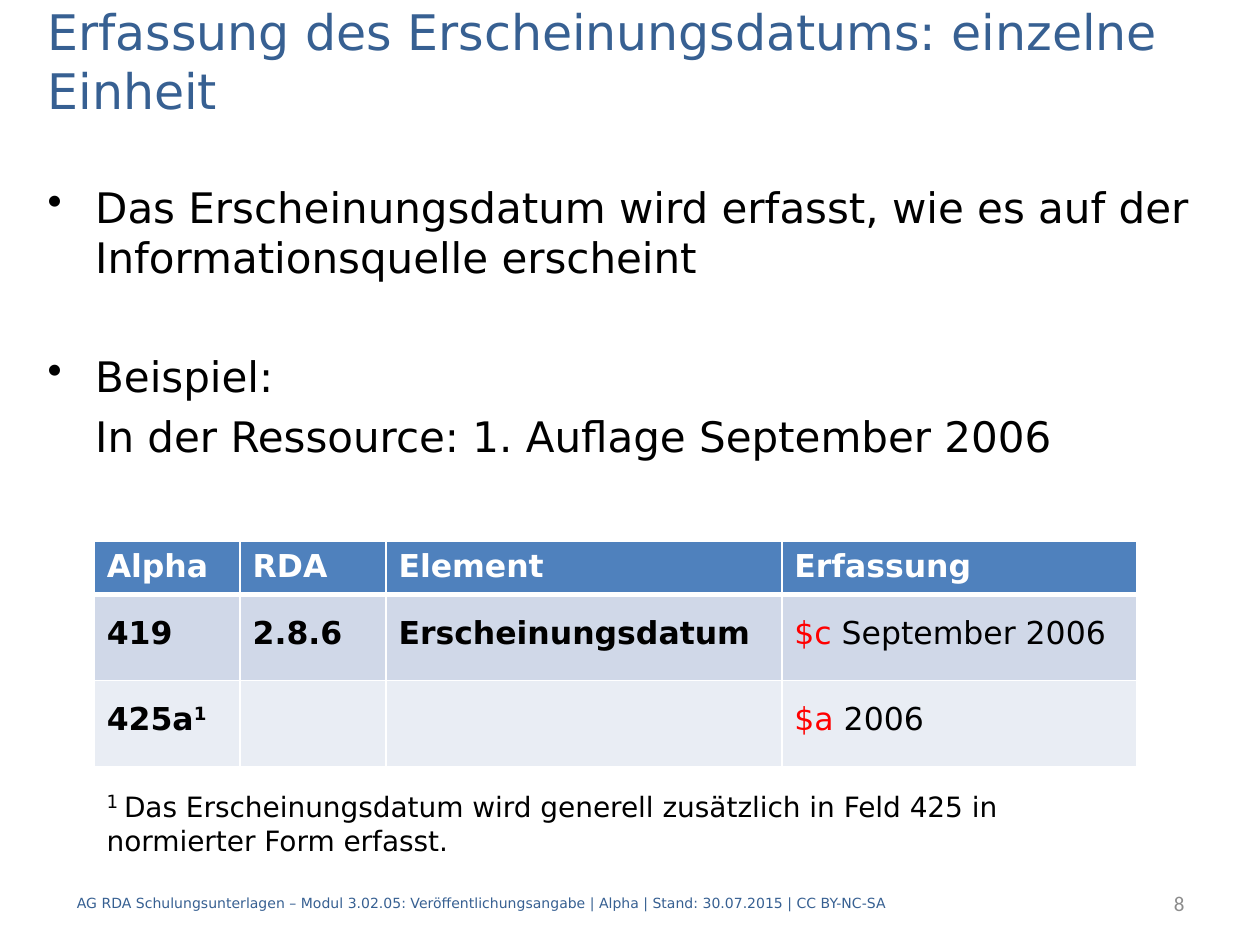
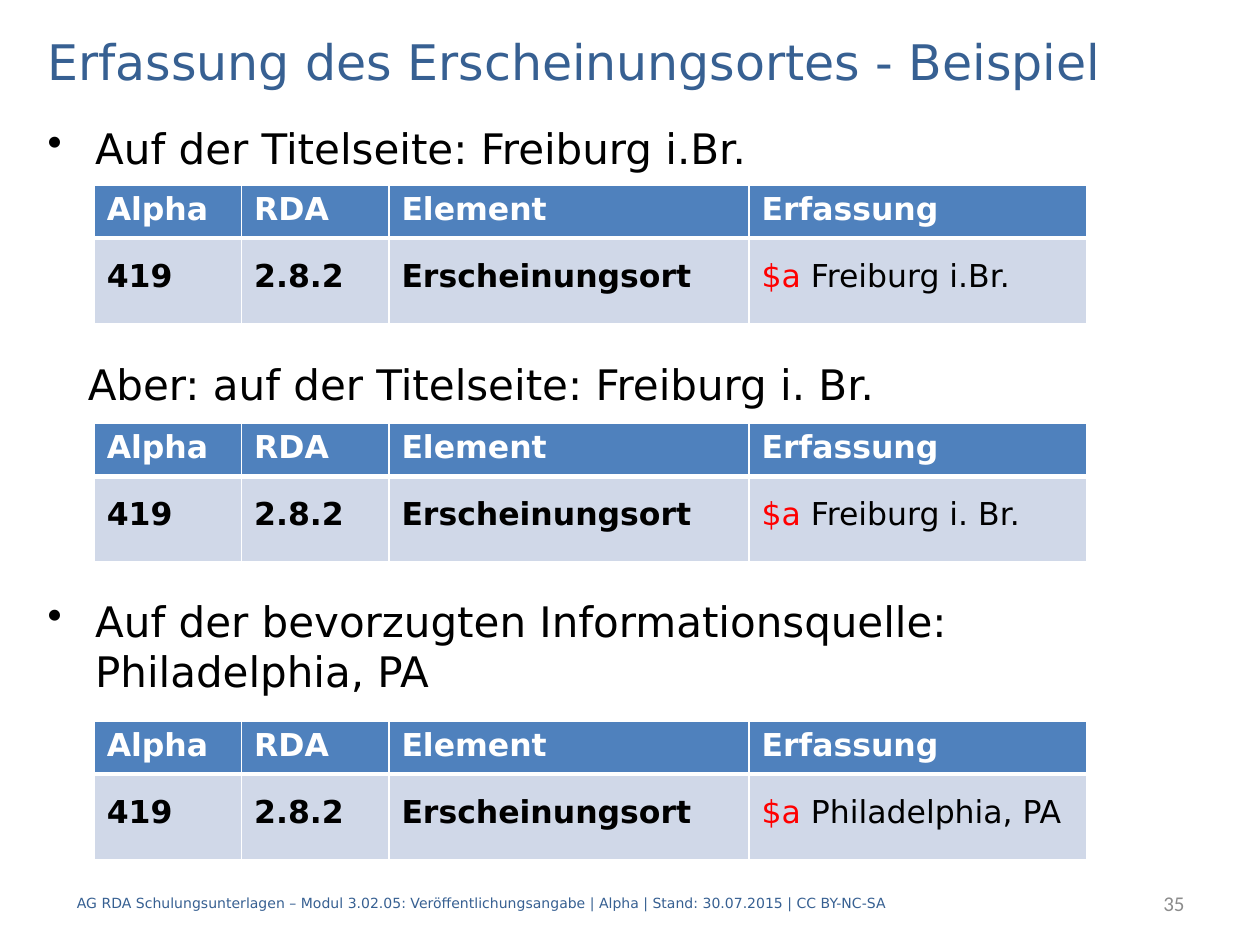
"""Builds two training slides on recording publication dates and places."""
import pptx
import pptx.dml.color
import pptx.enum.text
import pptx.oxml
import pptx.oxml.ns
import pptx.util
from pptx.util import Cm, Pt

RGBColor = pptx.dml.color.RGBColor
ANCHOR = pptx.enum.text.MSO_ANCHOR
ALIGN = pptx.enum.text.PP_ALIGN

BLACK = RGBColor(0x00, 0x00, 0x00)
WHITE = RGBColor(0xFF, 0xFF, 0xFF)
RED = RGBColor(0xFF, 0x00, 0x00)
GREY = RGBColor(0x8C, 0x8C, 0x8C)
NAVY = RGBColor(0x37, 0x60, 0x92)
HEADER_BLUE = RGBColor(0x4F, 0x81, 0xBD)
BAND_COLORS = [RGBColor(0xD0, 0xD8, 0xE8), RGBColor(0xE9, 0xED, 0xF4)]

FOOTER = ("AG RDA Schulungsunterlagen – Modul 3.02.05: Veröffentlichungsangabe"
          " | Alpha | Stand: 30.07.2015 | CC BY-NC-SA")
HEADINGS = ["Alpha", "RDA", "Element", "Erfassung"]
SUPERSCRIPT = {"superscript": True}


def subfield(code, value):
    return [(code, {"color": RED, "bold": False}), (f" {value}", {"bold": False})]


def place_row(place):
    return ["419", "2.8.2", "Erscheinungsort", subfield("$a", place)]


SLIDES = [
    {
        "title": "Erfassung des Erscheinungsdatums: einzelne Einheit",
        "number": "8",
        "points": [
            {"text": "Das Erscheinungsdatum wird erfasst, wie es auf der "
                     "Informationsquelle erscheint", "skipped": 1, "bullet": True},
            {"text": "Beispiel:", "skipped": 1, "bullet": True},
            {"text": "In der Ressource: 1. Auflage September 2006", "indent": 0.96},
        ],
        "columns": [2.94, 2.94, 7.98, 7.16],
        "tables": [(10.92, [
            ["419", "2.8.6", "Erscheinungsdatum", subfield("$c", "September 2006")],
            [[("425a", {}), ("1", SUPERSCRIPT)], "", "", subfield("$a", "2006")],
        ])],
        "footnote": [
            ("1 ", {"size": 18, **SUPERSCRIPT}),
            ("Das Erscheinungsdatum wird generell zusätzlich in Feld 425 in "
             "normierter Form erfasst.", {}),
        ],
    },
    {
        "title": "Erfassung des Erscheinungsortes - Beispiel",
        "number": "35",
        "points": [
            {"text": "Auf der Titelseite: Freiburg i.Br.", "bullet": True},
            {"text": "Aber: auf der Titelseite: Freiburg i. Br.", "skipped": 3, "indent": 0.81},
            {"text": "Auf der bevorzugten Informationsquelle: Philadelphia, PA",
             "skipped": 3, "bullet": True},
        ],
        "columns": [2.97, 2.97, 7.26, 6.8],
        "tables": [
            (3.73, [place_row("Freiburg i.Br.")]),
            (8.53, [place_row("Freiburg i. Br.")]),
            (14.53, [place_row("Philadelphia, PA")]),
        ],
    },
]

TITLE_BOX = (0.71, 0.51, 24, 1.42)
BODY_BOX = (0.71, 2.34, 24, 15.19)
FOOTNOTE_BOX = (1.9, 15.72, 21, 1.7)
NUMBER_BOX = (20.09, 17.7, 4.04, 1.02)
FOOTER_BOX = (1.3, 17.7, 21, 1.02)
TABLE_LEFT = 1.9
HEADER_HEIGHT, ROW_HEIGHT = 1.07, 1.73
HANGING = 0.96
POINT_GAP = 5.6
LINE_STEP = 33.6
TOP_INSET = 3.6


def write(paragraph, content, size=18, color=BLACK, bold=False, font="DejaVu Sans",
          superscript=False, align=None, before=0, after=0, line=None):
    """Fill a paragraph with a string or with (text, format) runs."""
    paragraph.alignment = align
    paragraph.space_before, paragraph.space_after = Pt(before), Pt(after)
    if line:
        paragraph.line_spacing = Pt(line)
    base = {"size": size, "color": color, "bold": bold, "superscript": superscript}
    for text, changes in [(content, {})] if isinstance(content, str) else content:
        style = {**base, **changes}
        run = paragraph.add_run()
        run.text = text
        run.font.name = font
        run.font.size = Pt(style["size"])
        run.font.bold = style["bold"]
        run.font.color.rgb = style["color"]
        if style["superscript"]:
            run.font._element.set("baseline", "30000")


def add_frame(slide, box, anchor=ANCHOR.TOP):
    frame = slide.shapes.add_textbox(*map(Cm, box)).text_frame
    frame.word_wrap = True
    frame.vertical_anchor = anchor
    return frame


def add_line(slide, box, content, anchor=ANCHOR.MIDDLE, **style):
    write(add_frame(slide, box, anchor).paragraphs[0], content, **style)


def add_points(slide, points):
    frame = add_frame(slide, BODY_BOX)
    for index, point in enumerate(points):
        skipped = point.get("skipped", 0) * LINE_STEP
        if index == 0:
            paragraph, before = frame.paragraphs[0], 0
            frame.margin_top = Pt(TOP_INSET + skipped)
        else:
            paragraph, before = frame.add_paragraph(), POINT_GAP + skipped
        write(paragraph, point["text"], size=24, before=before)
        properties = paragraph._p.get_or_add_pPr()
        properties.set("marL", str(Cm(point.get("indent", HANGING))))
        properties.set("indent", str(-Cm(HANGING) if point.get("bullet") else 0))
        if point.get("bullet"):
            bullet = pptx.oxml.parse_xml(
                f'<a:buChar {pptx.oxml.ns.nsdecls("a")} char="•"/>')
            properties.append(bullet)


def add_borders(cell, widths):
    properties = cell._tc.get_or_add_tcPr()
    for index, (side, width) in enumerate(widths.items()):
        properties.insert(index, pptx.oxml.parse_xml(
            f'<a:ln{side} {pptx.oxml.ns.nsdecls("a")} w="{Pt(width)}"><a:solidFill>'
            f'<a:srgbClr val="{WHITE}"/></a:solidFill></a:ln{side}>'))


def add_entries(slide, top, columns, entries):
    heights = [HEADER_HEIGHT] + [ROW_HEIGHT] * len(entries)
    table = slide.shapes.add_table(
        len(heights), len(columns), Cm(TABLE_LEFT), Cm(top),
        Cm(sum(columns)), Cm(sum(heights))).table
    for column, width in zip(table.columns, columns):
        column.width = Cm(width)
    for index, (row, height, contents) in enumerate(
            zip(table.rows, heights, [HEADINGS] + entries)):
        row.height = Cm(height)
        for cell, content in zip(row.cells, contents):
            paragraph = cell.text_frame.paragraphs[0]
            cell.fill.solid()
            if index == 0:
                cell.fill.fore_color.rgb = HEADER_BLUE
                write(paragraph, content, color=WHITE, bold=True)
            else:
                cell.fill.fore_color.rgb = BAND_COLORS[(index - 1) % 2]
                cell.vertical_anchor = ANCHOR.MIDDLE
                if content:
                    write(paragraph, content, bold=True, before=6, after=6, line=16)
            add_borders(cell, {"L": 1, "R": 1, "T": 3 if index == 1 else 1,
                               "B": 3 if index == 0 else 1})


def add_slide(deck, content):
    slide = deck.slides.add_slide(deck.slide_layouts[6])
    add_line(slide, TITLE_BOX, content["title"], size=28, color=NAVY)
    add_points(slide, content["points"])
    for top, entries in content["tables"]:
        add_entries(slide, top, content["columns"], entries)
    if "footnote" in content:
        add_line(slide, FOOTNOTE_BOX, content["footnote"], anchor=ANCHOR.TOP, size=16)
    add_line(slide, NUMBER_BOX, content["number"], size=12, color=GREY,
             font="Calibri", align=ALIGN.RIGHT)
    add_line(slide, FOOTER_BOX, FOOTER, size=8, color=NAVY)


def main():
    deck = pptx.Presentation()
    deck.slide_width, deck.slide_height = Cm(25.4), Cm(19.05)
    for content in SLIDES:
        add_slide(deck, content)
    deck.save("out.pptx")


if __name__ == "__main__":
    main()
